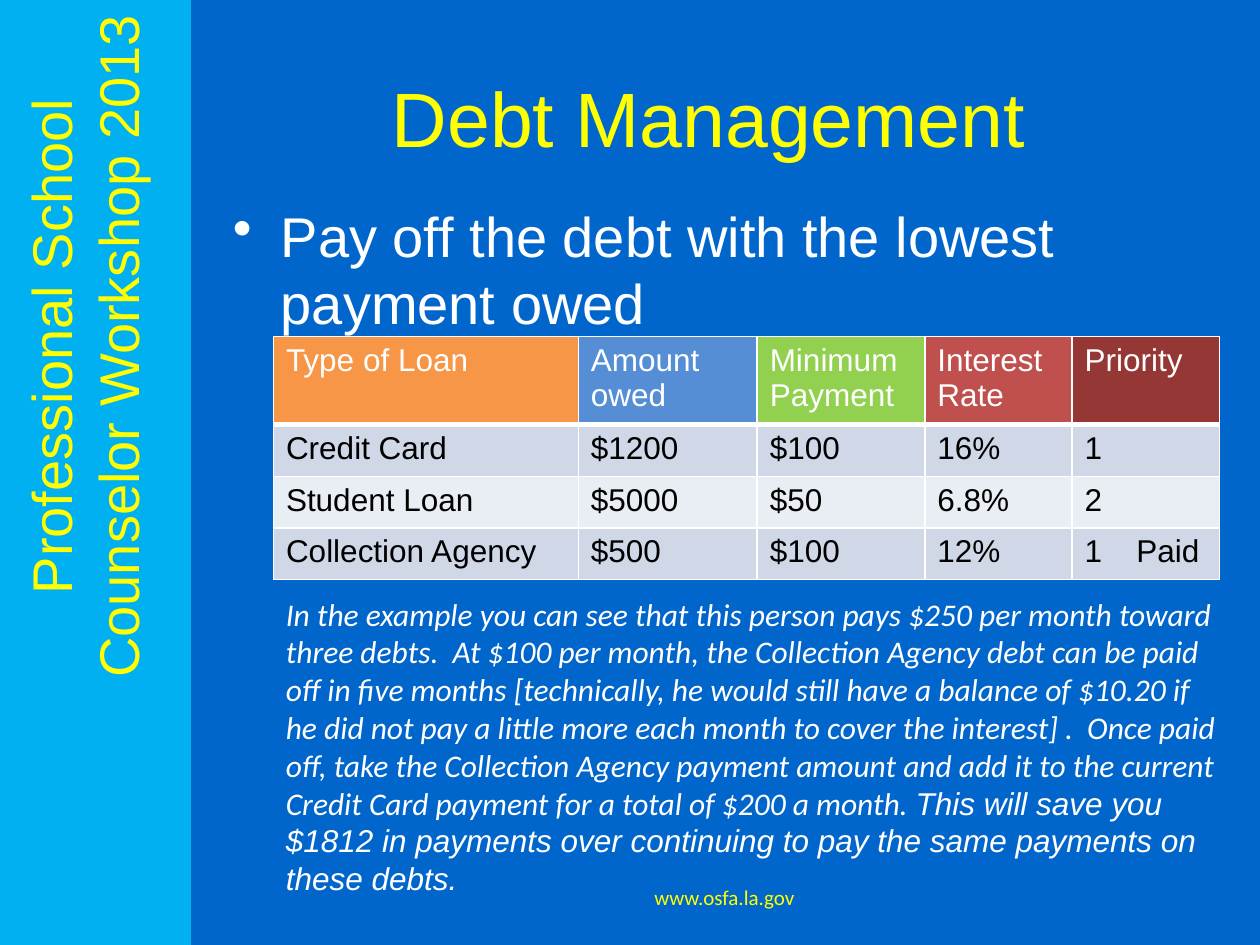
"""Build the Debt Management slide with its loan priority table."""
import pptx
import pptx.dml.color
import pptx.enum.shapes
import pptx.enum.text
import pptx.oxml
import pptx.oxml.ns
import pptx.util

RGBColor = pptx.dml.color.RGBColor
Inches = pptx.util.Inches
Pt = pptx.util.Pt
ALIGN = pptx.enum.text.PP_ALIGN
ANCHOR = pptx.enum.text.MSO_ANCHOR

BLUE = RGBColor(0x00, 0x66, 0xCC)
CYAN = RGBColor(0x00, 0xB0, 0xF0)
YELLOW = RGBColor(0xFF, 0xFF, 0x00)
WHITE = RGBColor(0xFF, 0xFF, 0xFF)
BLACK = RGBColor(0x00, 0x00, 0x00)
HEADER_FILLS = [
    RGBColor(0xF7, 0x96, 0x46),
    RGBColor(0x55, 0x8E, 0xD5),
    RGBColor(0x92, 0xD0, 0x50),
    RGBColor(0xC0, 0x50, 0x4D),
    RGBColor(0x95, 0x37, 0x35),
]
BAND_FILLS = [RGBColor(0xD0, 0xD8, 0xE8), RGBColor(0xE9, 0xED, 0xF4)]

WORKSHOP = "Professional School Counselor Workshop 2013"
TITLE = "Debt Management"
ADVICE = "Pay off the debt with the lowest payment owed"
WEBSITE = "www.osfa.la.gov"
LOANS = [
    ("Type of Loan", "Amount owed", "Minimum Payment", "Interest Rate", "Priority"),
    ("Credit Card", "$1200", "$100", "16%", "1"),
    ("Student Loan", "$5000", "$50", "6.8%", "2"),
    ("Collection Agency", "$500", "$100", "12%", "1\tPaid"),
]
EXAMPLE = [
    ("In the example you can see that this person pays $250 per month toward "
     "three debts.  At $100 per month, the Collection Agency debt can be paid "
     "off in five months [technically, he would still have a balance of $10.20 "
     "if he did not pay a little more each month to cover the interest] .  Once "
     "paid off, take the Collection Agency payment amount and add it to the "
     "current Credit Card payment for a total of $200 a month. ", "Calibri"),
    ("This will save you $1812 in payments over continuing to pay the same "
     "payments on these debts.", "Arial"),
]

SLIDE_WIDTH, SLIDE_HEIGHT = 10, 7.5
SIDEBAR_WIDTH = 0.15 * SLIDE_WIDTH
CONTENT_LEFT, CONTENT_WIDTH = 1.75, 7.75
TABLE_LEFT, TABLE_TOP = 2.17, 2.67
COLUMN_WIDTHS = [2.42, 1.42, 1.33, 1.17, 1.17]
HEADER_HEIGHT, ROW_HEIGHT = 0.66, 0.41


def style(font, size, color, name="Arial"):
    font.size = Pt(size)
    font.color.rgb = color
    font.name = name


def add_text(slide, box, text, size, color, name="Arial", align=ALIGN.CENTER,
             anchor=ANCHOR.TOP):
    frame = slide.shapes.add_textbox(*map(Inches, box)).text_frame
    frame.word_wrap = True
    frame.vertical_anchor = anchor
    paragraph = frame.paragraphs[0]
    paragraph.text = text
    paragraph.alignment = align
    style(paragraph.font, size, color, name)
    return frame


def add_child(parent, tag, body="", **attributes):
    listed = "".join(f' {key}="{value}"' for key, value in attributes.items())
    parent.append(pptx.oxml.parse_xml(
        f'<a:{tag} {pptx.oxml.ns.nsdecls("a")}{listed}>{body}</a:{tag}>'))


def add_sidebar(slide):
    band = slide.shapes.add_shape(
        pptx.enum.shapes.MSO_SHAPE.RECTANGLE, 0, 0,
        Inches(SIDEBAR_WIDTH), Inches(SLIDE_HEIGHT))
    band.shadow.inherit = False
    band.fill.solid()
    band.fill.fore_color.rgb = CYAN
    band.line.color.rgb = CYAN
    band.line.width = Pt(2)
    workshop = add_text(slide, (0.08, 0, 1.28, 5.5), WORKSHOP, 32, YELLOW)
    workshop._txBody.bodyPr.set("vert", "vert270")


def add_advice(slide):
    frame = add_text(slide, (CONTENT_LEFT, 1.55, CONTENT_WIDTH, 1.1), "", 32,
                     WHITE, align=ALIGN.LEFT)
    paragraph = frame.paragraphs[0]
    paragraph.text = ADVICE
    properties = paragraph._p.get_or_add_pPr()
    properties.set("marL", str(Inches(0.38)))
    properties.set("indent", str(-Inches(0.38)))
    properties.insert_element_before(
        pptx.oxml.parse_xml(
            f'<a:buChar {pptx.oxml.ns.nsdecls("a")} char="•"/>'), "a:defRPr")


def add_loans(slide):
    heights = [HEADER_HEIGHT] + [ROW_HEIGHT] * (len(LOANS) - 1)
    table = slide.shapes.add_table(
        len(LOANS), len(COLUMN_WIDTHS), Inches(TABLE_LEFT), Inches(TABLE_TOP),
        Inches(sum(COLUMN_WIDTHS)), Inches(sum(heights))).table
    for column, width in zip(table.columns, COLUMN_WIDTHS):
        column.width = Inches(width)
    for r, (height, loan) in enumerate(zip(heights, LOANS)):
        table.rows[r].height = Inches(height)
        for c, text in enumerate(loan):
            cell = table.cell(r, c)
            for side in ("lnL", "lnR", "lnT", "lnB"):
                width = Pt(3 if r == 0 and side == "lnB" else 1)
                add_child(
                    cell._tc.get_or_add_tcPr(), side,
                    f'<a:solidFill><a:srgbClr val="{WHITE}"/></a:solidFill>',
                    w=int(width))
            cell.fill.solid()
            cell.fill.fore_color.rgb = (
                BAND_FILLS[(r - 1) % 2] if r else HEADER_FILLS[c])
            paragraph = cell.text_frame.paragraphs[0]
            paragraph.text = text
            if "\t" in text:
                add_child(paragraph._p.get_or_add_pPr(), "tabLst",
                          f'<a:tab pos="{Inches(0.41)}" algn="l"/>')
            style(paragraph.font, 18, BLACK if r else WHITE)
            paragraph.font.bold = False


def add_example(slide):
    frame = add_text(slide, (TABLE_LEFT, 4.67, 7.58, 2.52), "", 18, WHITE,
                     align=ALIGN.LEFT)
    paragraph = frame.paragraphs[0]
    paragraph.font.italic = True
    for text, name in EXAMPLE:
        run = paragraph.add_run()
        run.text = text
        run.font.name = name


def main():
    deck = pptx.Presentation()
    deck.slide_width = Inches(SLIDE_WIDTH)
    deck.slide_height = Inches(SLIDE_HEIGHT)
    slide = deck.slides.add_slide(deck.slide_layouts[6])
    slide.background.fill.solid()
    slide.background.fill.fore_color.rgb = BLUE
    add_sidebar(slide)
    add_text(slide, (CONTENT_LEFT, 0.3, CONTENT_WIDTH, 1.25), TITLE, 44, YELLOW,
             anchor=ANCHOR.MIDDLE)
    add_advice(slide)
    add_text(slide, (SIDEBAR_WIDTH, 6.92, SLIDE_WIDTH - SIDEBAR_WIDTH, 0.4),
             WEBSITE, 12, YELLOW, "Calibri", anchor=ANCHOR.MIDDLE)
    add_loans(slide)
    add_example(slide)
    deck.save("out.pptx")


if __name__ == "__main__":
    main()
